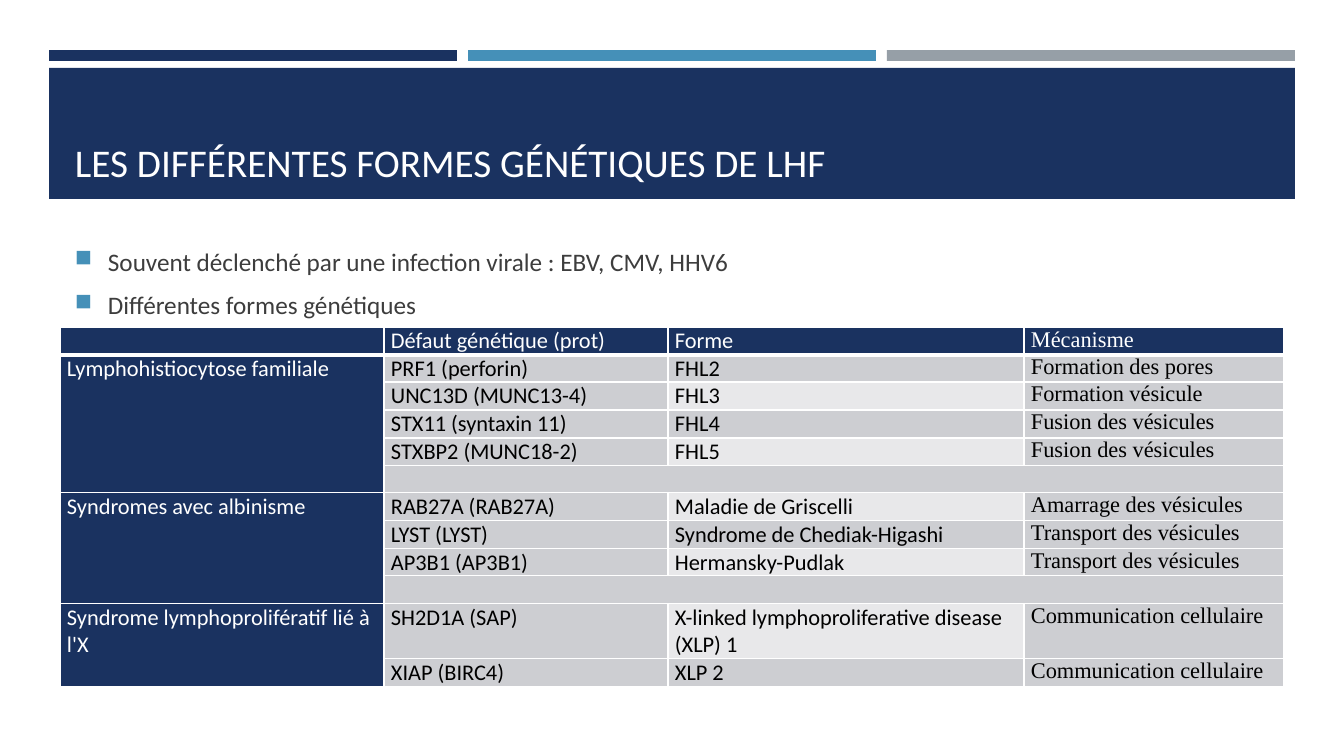
"""Build the slide on the genetic forms of LHF."""
from dataclasses import dataclass

from lxml import etree
from pptx import Presentation
from pptx import util as u
from pptx.dml.color import RGBColor
from pptx.enum import shapes, text
from pptx.oxml import ns

TITLE = "LES DIFFÉRENTES FORMES GÉNÉTIQUES DE LHF"
BULLETS = [
    "Souvent déclenché par une infection virale : EBV, CMV, HHV6",
    "Différentes formes génétiques",
]
HEADER = ("", "Défaut génétique (prot)", "Forme", "Mécanisme")
GROUPS = [
    ("Lymphohistiocytose familiale", [
        ("PRF1 (perforin)", "FHL2", "Formation des pores"),
        ("UNC13D (MUNC13-4)", "FHL3", "Formation vésicule"),
        ("STX11 (syntaxin 11)", "FHL4", "Fusion des vésicules"),
        ("STXBP2 (MUNC18-2)", "FHL5", "Fusion des vésicules"),
        ("", "", ""),
    ]),
    ("Syndromes avec albinisme", [
        ("RAB27A (RAB27A)", "Maladie de Griscelli", "Amarrage des vésicules"),
        ("LYST (LYST)", "Syndrome de Chediak-Higashi", "Transport des vésicules"),
        ("AP3B1 (AP3B1)", "Hermansky-Pudlak", "Transport des vésicules"),
        ("", "", ""),
    ]),
    ("Syndrome lymphoprolifératif lié à l'X", [
        ("SH2D1A (SAP)", "X-linked lymphoproliferative disease (XLP) 1",
         "Communication cellulaire"),
        ("XIAP (BIRC4)", "XLP 2", "Communication cellulaire"),
    ]),
]
COLUMNS = (324, 284, 356, 260)
TABLE_LEFT, TABLE_TOP = 60, 327
ROW_PITCH, TALL_ROW, TALL_HEIGHT = 27.72, 10, 55
FORM_COLUMN, MECHANISM_COLUMN = 2, 3


@dataclass(frozen=True)
class Theme:
    """Colours, fonts and type sizes."""
    navy: str = "1A3260"
    blue: str = "4590B8"
    grey: str = "969FA7"
    white: str = "FFFFFF"
    black: str = "000000"
    body: str = "3D3D3D"
    cell: str = "CDCED2"
    light_cell: str = "E8E8EA"
    sans: str = "Calibri"
    serif: str = "Times New Roman"
    title_size: int = 28
    body_size: int = 18
    table_size: int = 16


THEME = Theme()


def px(length):
    """Turn px into EMU."""
    return u.Emu(round(length * 914400 / 100.8))


def add_bar(slide, left, top, width, height, color):
    """Add a plain filled rectangle."""
    shape = slide.shapes.add_shape(
        shapes.MSO_SHAPE.RECTANGLE, px(left), px(top), px(width), px(height))
    shape.shadow.inherit = False
    shape.fill.solid()
    shape.fill.fore_color.rgb = RGBColor.from_string(color)
    shape.line.fill.background()


def write(paragraph, content, *, size, color, font=THEME.sans):
    """Write formatted text into a paragraph."""
    if not content:
        etree.SubElement(paragraph._p, ns.qn("a:endParaRPr"), sz=str(size * 100))
        return
    run = paragraph.add_run()
    run.text = content
    run.font.size = u.Pt(size)
    run.font.name = font
    run.font.bold = False
    run.font.color.rgb = RGBColor.from_string(color)


def add_text_frame(slide, left, top, width, height, anchor):
    """Add a wrapping text box and return its frame."""
    frame = slide.shapes.add_textbox(px(left), px(top), px(width), px(height)).text_frame
    frame.word_wrap = True
    frame.vertical_anchor = anchor
    return frame


def add_bullet(paragraph):
    """Give a paragraph a hanging square bullet."""
    properties = paragraph._p.get_or_add_pPr()
    properties.set("marL", str(px(33)))
    properties.set("indent", str(-px(33)))
    color = etree.SubElement(properties, ns.qn("a:buClr"))
    etree.SubElement(color, ns.qn("a:srgbClr"), val=THEME.blue)
    etree.SubElement(properties, ns.qn("a:buSzPct"), val="92000")
    etree.SubElement(properties, ns.qn("a:buChar"), char="■")


def add_borders(cell, bottom):
    """Draw white borders around a cell."""
    properties = cell._tc.get_or_add_tcPr()
    widths = {"lnL": 1, "lnR": 1, "lnT": 1, "lnB": bottom}
    for position, (side, width) in enumerate(widths.items()):
        line = etree.Element(ns.qn(f"a:{side}"), w=str(u.Pt(width)))
        fill = etree.SubElement(line, ns.qn("a:solidFill"))
        etree.SubElement(fill, ns.qn("a:srgbClr"), val=THEME.white)
        properties.insert(position, line)


def fill_cell(cell, content, row, column):
    """Write and style one table cell."""
    heading = row == 0 or column == 0
    light = column == FORM_COLUMN and row % 2 == 0
    cell.margin_left = cell.margin_right = px(7)
    cell.margin_top = cell.margin_bottom = 0
    cell.fill.solid()
    cell.fill.fore_color.rgb = RGBColor.from_string(
        THEME.navy if heading else THEME.light_cell if light else THEME.cell)
    add_borders(cell, bottom=3 if row == 0 else 1)
    write(cell.text_frame.paragraphs[0], content, size=THEME.table_size,
          color=THEME.white if heading else THEME.black,
          font=THEME.serif if column == MECHANISM_COLUMN else THEME.sans)


def add_forms_table(slide):
    """Add the table of genetic forms with its merged groups."""
    rows = [HEADER]
    spans = []
    for name, entries in GROUPS:
        spans.append((len(rows), len(rows) + len(entries) - 1))
        rows += [(name if index == 0 else "", *entry)
                 for index, entry in enumerate(entries)]
    heights = [round((row + 1) * ROW_PITCH) - round(row * ROW_PITCH)
               for row in range(len(rows))]
    heights[TALL_ROW] = TALL_HEIGHT
    table = slide.shapes.add_table(
        len(rows), len(COLUMNS), px(TABLE_LEFT), px(TABLE_TOP),
        px(sum(COLUMNS)), px(sum(heights))).table
    table.first_row = table.horz_banding = False
    for column, width in zip(table.columns, COLUMNS):
        column.width = px(width)
    for row, (values, height) in enumerate(zip(rows, heights)):
        table.rows[row].height = px(height)
        for column, value in enumerate(values):
            fill_cell(table.cell(row, column), value, row, column)
        if not any(values):
            table.cell(row, 1).merge(table.cell(row, len(COLUMNS) - 1))
    for first, last in spans:
        table.cell(first, 0).merge(table.cell(last, 0))


def main():
    """Build and save the presentation."""
    presentation = Presentation()
    presentation.slide_width, presentation.slide_height = px(1344), px(756)
    slide = presentation.slides.add_slide(presentation.slide_layouts[6])
    for index, color in enumerate((THEME.navy, THEME.blue, THEME.grey)):
        add_bar(slide, 49 + index * 419, 50, 408, 11, color)
    add_bar(slide, 49, 68, 1246, 131, THEME.navy)

    title = add_text_frame(slide, 65, 78, 1216, 112, text.MSO_ANCHOR.BOTTOM)
    write(title.paragraphs[0], TITLE, size=THEME.title_size, color=THEME.white)

    body = add_text_frame(slide, 65, 241, 1216, 405, text.MSO_ANCHOR.TOP)
    for index, bullet in enumerate(BULLETS):
        paragraph = body.add_paragraph() if index else body.paragraphs[0]
        paragraph.space_before = u.Pt(3.6 if index else 0)
        paragraph.space_after = u.Pt(6)
        add_bullet(paragraph)
        write(paragraph, bullet, size=THEME.body_size, color=THEME.body)

    add_forms_table(slide)
    presentation.save("out.pptx")


if __name__ == "__main__":
    main()
